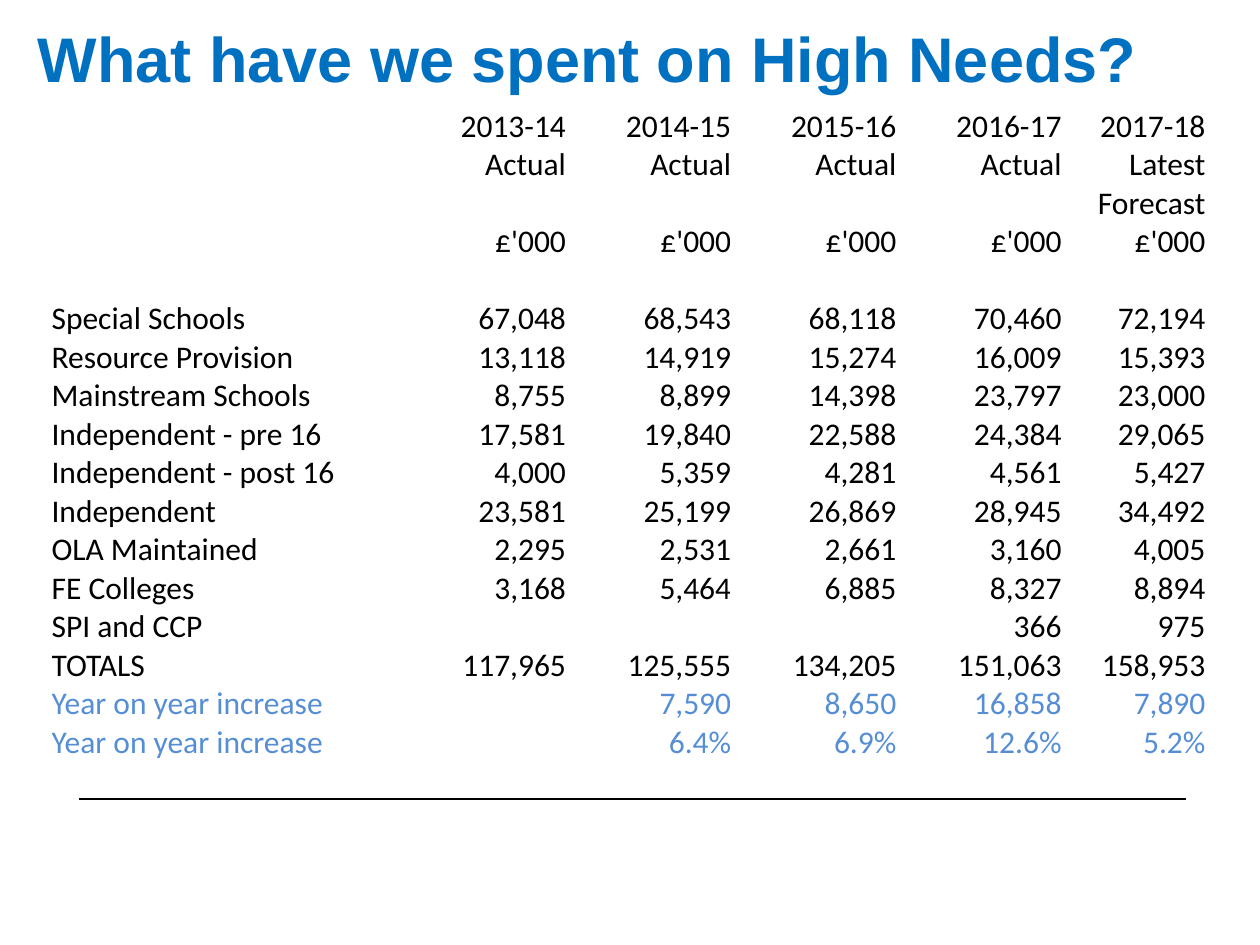
from dataclasses import dataclass

from lxml.etree import SubElement
from pptx import Presentation
from pptx.dml.color import RGBColor
from pptx.enum.shapes import MSO_CONNECTOR
from pptx.enum.text import MSO_ANCHOR as Anchor, PP_ALIGN as Align
from pptx.oxml.ns import qn
from pptx.util import Cm, Pt


@dataclass(frozen=True)
class Theme:
    heading: RGBColor = RGBColor(0x00, 0x70, 0xC0)
    ink: RGBColor = RGBColor(0x00, 0x00, 0x00)
    increase: RGBColor = RGBColor(0x55, 0x8E, 0xD5)
    border: str = "FFFFFF"
    heading_font: str = "Arial"
    table_font: str = "Calibri"
    heading_size: Pt = Pt(36)
    table_size: Pt = Pt(18)
    line_width: Pt = Pt(1)


THEME = Theme()

COLUMN_WIDTHS = [7.04] + [3.33] * 4 + [2.9]
ROW_HEIGHT = 0.77
STATUS_ROW, STATUS_HEIGHT = 1, 1.55
INCREASE_LABEL = "Year on year increase"
SPENDING = [
    ["", "2013-14", "2014-15", "2015-16", "2016-17", "2017-18"],
    ["", "Actual", "Actual", "Actual", "Actual", "Latest Forecast"],
    [""] + ["£'000"] * 5,
    [""] * 6,
    ["Special Schools", "67,048", "68,543", "68,118", "70,460", "72,194"],
    ["Resource Provision", "13,118", "14,919", "15,274", "16,009", "15,393"],
    ["Mainstream Schools", "8,755", "8,899", "14,398", "23,797", "23,000"],
    ["Independent - pre 16", "17,581", "19,840", "22,588", "24,384", "29,065"],
    ["Independent - post 16", "4,000", "5,359", "4,281", "4,561", "5,427"],
    ["Independent", "23,581", "25,199", "26,869", "28,945", "34,492"],
    ["OLA Maintained", "2,295", "2,531", "2,661", "3,160", "4,005"],
    ["FE Colleges", "3,168", "5,464", "6,885", "8,327", "8,894"],
    ["SPI and CCP", "", "", "", "366", "975"],
    ["TOTALS", "117,965", "125,555", "134,205", "151,063", "158,953"],
    [INCREASE_LABEL, "", "7,590", "8,650", "16,858", "7,890"],
    [INCREASE_LABEL, "", "6.4%", "6.9%", "12.6%", "5.2%"],
]


def apply_format(target, values):
    for name, value in values.items():
        setattr(target, name, value)


def write_text(paragraph, text, align, color, **font_values):
    paragraph.alignment = align
    run = paragraph.add_run()
    run.text = text
    apply_format(run.font, font_values)
    run.font.color.rgb = color


def add_heading(slide, text):
    heading = slide.shapes.title
    apply_format(heading, {"left": Cm(0.51), "top": Cm(-0.43),
                           "width": Cm(22.86), "height": Cm(3.18)})
    apply_format(heading.text_frame, {"vertical_anchor": Anchor.MIDDLE, "word_wrap": True})
    write_text(heading.text_frame.paragraphs[0], text, Align.LEFT, THEME.heading,
               name=THEME.heading_font, size=THEME.heading_size, bold=True)


def add_borders(cell):
    properties = cell._tc.get_or_add_tcPr()
    for side in ("a:lnL", "a:lnR", "a:lnT", "a:lnB"):
        border = SubElement(properties, qn(side), w=str(THEME.line_width))
        fill = SubElement(border, qn("a:solidFill"))
        SubElement(fill, qn("a:srgbClr"), val=THEME.border)


def format_cell(cell, text, align, anchor, color):
    apply_format(cell, {"margin_left": 0, "margin_right": 0, "margin_top": 0,
                        "margin_bottom": 0, "vertical_anchor": anchor})
    add_borders(cell)
    cell.fill.background()
    if text:
        write_text(cell.text_frame.paragraphs[0], text, align, color,
                   name=THEME.table_font, size=THEME.table_size)


def add_spending_table(slide):
    heights = [ROW_HEIGHT] * len(SPENDING)
    heights[STATUS_ROW] = STATUS_HEIGHT
    table = slide.shapes.add_table(
        len(SPENDING), len(COLUMN_WIDTHS), Cm(1.04), Cm(2.16),
        Cm(sum(COLUMN_WIDTHS)), Cm(sum(heights))).table
    apply_format(table, {"first_row": False, "horz_banding": False})
    for column, width in zip(table.columns, COLUMN_WIDTHS):
        column.width = Cm(width)

    for row_index, (row, height, texts) in enumerate(zip(table.rows, heights, SPENDING)):
        row.height = Cm(height)
        color = THEME.increase if texts[0] == INCREASE_LABEL else THEME.ink
        anchor = Anchor.TOP if row_index == STATUS_ROW else Anchor.BOTTOM
        for column_index, (cell, text) in enumerate(zip(row.cells, texts)):
            align = Align.RIGHT if column_index else Align.LEFT
            format_cell(cell, text, align, anchor, color)


def add_rule(slide, left, right, y):
    rule = slide.shapes.add_connector(
        MSO_CONNECTOR.STRAIGHT, Cm(left), Cm(y), Cm(right), Cm(y))
    rule.line.color.rgb = THEME.ink
    rule.line.width = THEME.line_width
    SubElement(rule._element.spPr, qn("a:effectLst"))


def main():
    deck = Presentation()
    apply_format(deck, {"slide_width": Cm(25.4), "slide_height": Cm(19.05)})
    slide = deck.slides.add_slide(deck.slide_layouts.get_by_name("Title Only"))

    # Heading
    add_heading(slide, "What have we spent on High Needs?")
    # Closing rule below the figures
    add_rule(slide, 1.6, 23.9, 16.1)
    # Spending by category and year
    add_spending_table(slide)

    deck.save("out.pptx")


if __name__ == "__main__":
    main()
